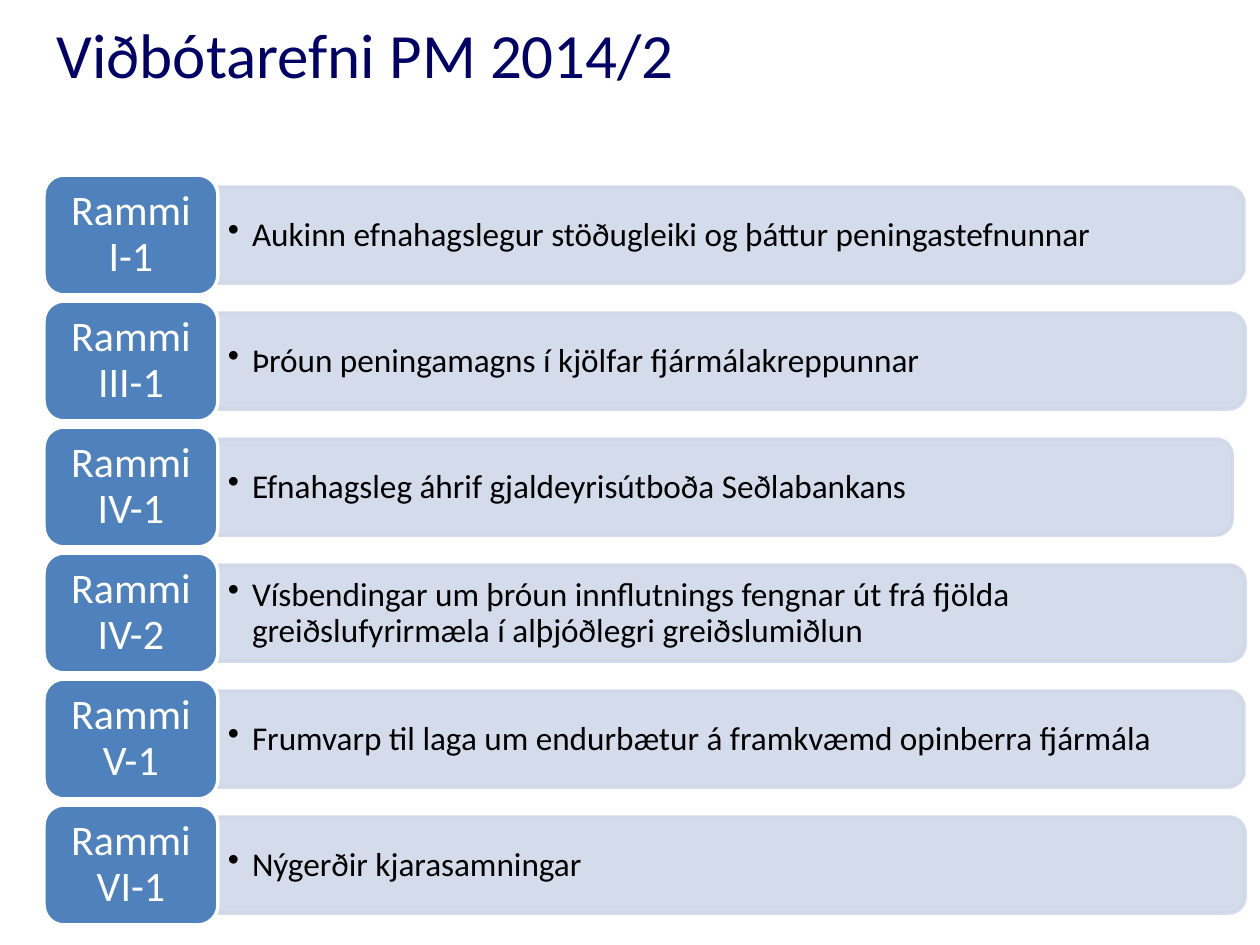
from lxml.etree import SubElement
from pptx import Presentation
from pptx.dml.color import RGBColor
from pptx.enum.shapes import MSO_SHAPE as Shape
from pptx.enum.text import MSO_ANCHOR as Anchor, PP_ALIGN as Align
from pptx.oxml.ns import qn
from pptx.util import Emu, Pt

SCALE = 914400 / 126
FONT = "Calibri"
NAVY = RGBColor(0x00, 0x00, 0x66)
BLUE = RGBColor(0x4F, 0x81, 0xBD)
PALE = RGBColor(0xD0, 0xD8, 0xE8)
WHITE = RGBColor(0xFF, 0xFF, 0xFF)
BLACK = RGBColor(0x00, 0x00, 0x00)

LEFT, TAG_W, TAG_H = 44, 174, 120
BAR_H, TEXT_H = 96, 87
TOP, PITCH = 175, 126
ROWS = [
    ("Rammi I-1", "Aukinn efnahagslegur stöðugleiki og þáttur peningastefnunnar", 1026),
    ("Rammi III-1", "Þróun peningamagns í kjölfar fjármálakreppunnar", 1027),
    ("Rammi IV-1", "Efnahagsleg áhrif gjaldeyrisútboða Seðlabankans", 1014),
    ("Rammi IV-2", "Vísbendingar um þróun innflutnings fengnar út frá fjölda "
                   "greiðslufyrirmæla í alþjóðlegri greiðslumiðlun", 1027),
    ("Rammi V-1", "Frumvarp til laga um endurbætur á framkvæmd opinberra fjármála", 1026),
    ("Rammi VI-1", "Nýgerðir kjarasamningar", 1027),
]


def px(num):
    return Emu(round(num * SCALE))


def box(*nums):
    return [px(num) for num in nums]


def add_run(para, text, size, color):
    run = para.add_run()
    run.text = text
    font = run.font
    font.name, font.size = FONT, Pt(size)
    font.color.rgb = color


def paint(shape, fill, line):
    shape.shadow.inherit = False
    shape.fill.solid()
    shape.fill.fore_color.rgb = fill
    shape.line.color.rgb = line
    shape.line.width = Pt(2)


def add_title(slide, text):
    title = slide.shapes.title
    title.left, title.top, title.width, title.height = box(44, 9, 1091, 166)
    frame = title.text_frame
    frame.word_wrap = True
    frame.vertical_anchor = Anchor.TOP
    para = frame.paragraphs[0]
    para.alignment = Align.LEFT
    add_run(para, text, 36, NAVY)


def add_bar(slide, left, top, width):
    """Add a bar rounded at its right end: a top-rounded shape on its side."""
    shift = (width - BAR_H) / 2
    bar = slide.shapes.add_shape(
        Shape.ROUND_2_SAME_RECTANGLE,
        *box(left + shift, top - shift, BAR_H, width))
    bar.rotation = 90
    paint(bar, PALE, PALE)
    for color in bar._element.spPr.iter(qn("a:srgbClr")):
        SubElement(color, qn("a:alpha"), val="90000")


def add_point(slide, text, left, top, width):
    """Add one bulleted line of text."""
    frame = slide.shapes.add_textbox(*box(left, top, width, TEXT_H)).text_frame
    frame.word_wrap = True
    frame.vertical_anchor = Anchor.MIDDLE
    frame.margin_left = frame.margin_right = px(10)
    frame.margin_top = frame.margin_bottom = px(5)
    para = frame.paragraphs[0]
    para.level = 1
    para.line_spacing = 0.9
    props = para._p.get_or_add_pPr()
    props.set("marL", str(px(24)))
    props.set("indent", str(-px(24)))
    SubElement(props, qn("a:buChar"), char="•")
    add_run(para, text, 19, BLACK)


def add_tag(slide, text, left, top):
    tag = slide.shapes.add_shape(
        Shape.ROUNDED_RECTANGLE, *box(left, top, TAG_W, TAG_H))
    paint(tag, BLUE, WHITE)
    frame = tag.text_frame
    frame.word_wrap = True
    frame.vertical_anchor = Anchor.MIDDLE
    para = frame.paragraphs[0]
    para.alignment = Align.CENTER
    para.line_spacing = 0.9
    add_run(para, text, 24, WHITE)


def main():
    prs = Presentation()
    prs.slide_width, prs.slide_height = box(1260, 945)
    slide = prs.slides.add_slide(prs.slide_layouts[5])
    add_title(slide, "Viðbótarefni PM 2014/2")
    start = LEFT + TAG_W
    for row, (tag, text, width) in enumerate(ROWS):
        top = TOP + row * PITCH
        mid = top + TAG_H // 2
        add_bar(slide, start, mid - BAR_H // 2, width)
        add_point(slide, text, start, mid - TEXT_H // 2, width - 4)
        add_tag(slide, tag, LEFT, top)
    prs.save("out.pptx")


if __name__ == "__main__":
    main()
